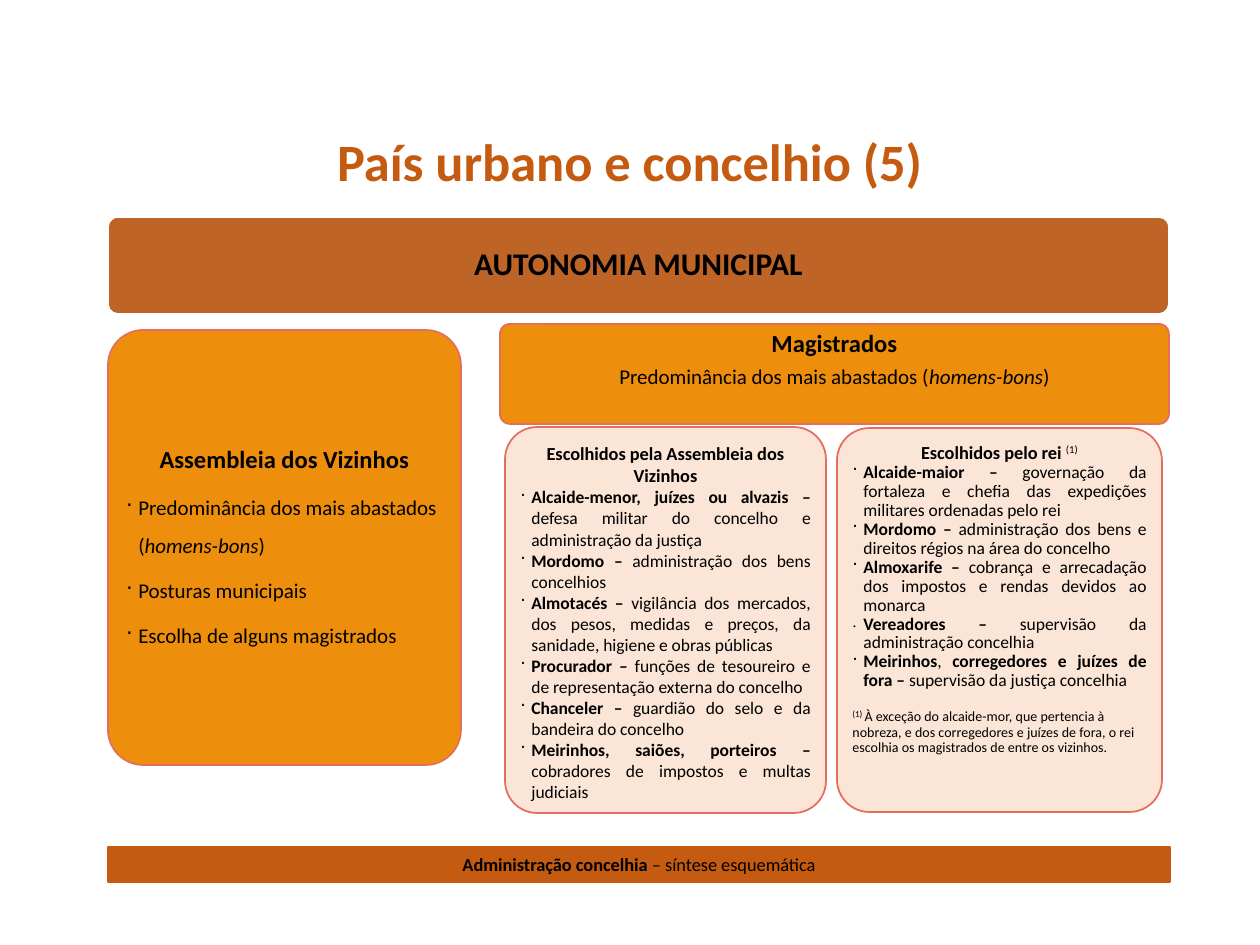
from lxml import etree
from pptx import Presentation
from pptx.dml.color import RGBColor
from pptx.enum.shapes import MSO_SHAPE
from pptx.enum.text import MSO_ANCHOR, MSO_AUTO_SIZE, PP_ALIGN
from pptx.oxml.ns import qn
from pptx.util import Emu, Pt

ROUNDED, RECTANGLE = MSO_SHAPE.ROUNDED_RECTANGLE, MSO_SHAPE.RECTANGLE
TOP, MIDDLE = MSO_ANCHOR.TOP, MSO_ANCHOR.MIDDLE
LEFT, CENTER, JUSTIFY = PP_ALIGN.LEFT, PP_ALIGN.CENTER, PP_ALIGN.JUSTIFY

PX_PER_INCH = 126
FONT = "Calibri"
BLACK, WHITE = "000000", "FFFFFF"
RUST, BROWN, ORANGE = "C55A11", "BE6427", "ED8E0C"
PEACH, CORAL = "FBE5D6", "E46E5E"

COUNCIL_DUTIES = [
    ("Alcaide-menor, juízes ou alvazis –",
     "defesa militar do concelho e administração da justiça"),
    ("Mordomo –", "administração dos bens concelhios"),
    ("Almotacés –", "vigilância dos mercados, dos pesos, medidas e preços, "
                    "da sanidade, higiene e obras públicas"),
    ("Procurador –",
     "funções de tesoureiro e de representação externa do concelho"),
    ("Chanceler –", "guardião do selo e da bandeira do concelho"),
    ("Meirinhos, saiões, porteiros –",
     "cobradores de impostos e multas judiciais"),
]
ROYAL_DUTIES = [
    ("Alcaide-maior –", "governação da fortaleza e chefia das expedições "
                        "militares ordenadas pelo rei"),
    ("Mordomo –",
     "administração dos bens e direitos régios na área do concelho"),
    ("Almoxarife –", "cobrança e arrecadação dos impostos e rendas "
                     "devidos ao monarca"),
    ("Vereadores –", "supervisão da administração concelhia"),
]


def px(length):
    return Emu(round(length * 914400 / PX_PER_INCH))


def rgb(value):
    return RGBColor.from_string(value)


def set_attributes(target, values):
    for name, value in values.items():
        setattr(target, name, value)


def add_panel(slide, box, fill, line, geometry=ROUNDED, line_width=1):
    panel = slide.shapes.add_shape(geometry, *map(px, box))
    if geometry == ROUNDED:
        panel.adjustments[0] = 0.1
    panel.shadow.inherit = False
    panel.fill.solid()
    panel.fill.fore_color.rgb = rgb(fill)
    panel.line.color.rgb = rgb(line)
    panel.line.width = Pt(line_width)
    return panel


def format_frame(frame, inset, anchor=MIDDLE, **overrides):
    sides = ("margin_left", "margin_top", "margin_right", "margin_bottom")
    set_attributes(frame, {
        "word_wrap": True, "auto_size": MSO_AUTO_SIZE.NONE,
        "vertical_anchor": anchor, **dict.fromkeys(sides, px(inset)),
        **overrides})


def add_bullet(paragraph, character, indent):
    """Hang the paragraph from a bullet, with the indent in px."""
    properties = paragraph._p.get_or_add_pPr()
    properties.set("marL", str(px(indent)))
    properties.set("indent", str(-px(indent)))
    etree.SubElement(properties, qn("a:buChar"), char=character)


def write(frame, runs, size, color=BLACK, bullet=None, indent=11, **formats):
    """Add a paragraph; runs are (text, marks[, size]), marks among b, i, ^."""
    first = frame.paragraphs[0]
    paragraph = frame.add_paragraph() if first.runs else first
    if bullet:
        add_bullet(paragraph, bullet, indent)
    set_attributes(paragraph, {
        "alignment": LEFT, "line_spacing": 1.0,
        "space_before": Pt(0), "space_after": Pt(0), **formats})
    for text, marks, *own_size in runs:
        run = paragraph.add_run()
        run.text = text
        set_attributes(run.font, {
            "name": FONT, "size": Pt(own_size[0] if own_size else size),
            "bold": "b" in marks, "italic": "i" in marks})
        run.font.color.rgb = rgb(color)
        if "^" in marks:
            run._r.get_or_add_rPr().set("baseline", "30000")


def write_duties(frame, duties, line_spacing, bullets):
    for (office, duty), bullet in zip(duties, bullets):
        write(frame, [(office + " ", "b"), (duty, "")], 10, bullet=bullet,
              alignment=JUSTIFY, line_spacing=line_spacing)


def add_title(slide):
    title = slide.shapes.title
    set_attributes(title, dict(left=px(0), top=px(122),
                               width=px(1260), height=px(77)))
    format_frame(title.text_frame, 6)
    write(title.text_frame, [("País urbano e concelhio (5)", "b")], 30,
          RUST, alignment=CENTER)


def add_autonomy(slide):
    frame = add_panel(slide, (108, 217, 1061, 97), BROWN, WHITE).text_frame
    format_frame(frame, 9)
    write(frame, [("AUTONOMIA MUNICIPAL", "b")], 18, alignment=CENTER,
          line_spacing=0.9)


def add_assembly(slide, wealthy):
    frame = add_panel(slide, (108, 330, 353, 435), ORANGE, CORAL).text_frame
    format_frame(frame, 8)
    write(frame, [("Assembleia dos Vizinhos", "b")], 14, alignment=CENTER,
          line_spacing=0.9, space_after=Pt(4.9))
    for runs in (wealthy, [("Posturas municipais", "")],
                 [("Escolha de alguns magistrados", "")]):
        write(frame, runs, 12, bullet="·", indent=12, line_spacing=1.5,
              space_after=Pt(4.2))


def add_magistrates(slide, wealthy):
    frame = add_panel(slide, (500, 324, 669, 100), ORANGE, CORAL).text_frame
    format_frame(frame, 8, TOP, margin_top=px(4))
    write(frame, [("Magistrados", "b")], 14, alignment=CENTER,
          line_spacing=0.9, space_after=Pt(4.9))
    write(frame, wealthy, 12, alignment=CENTER, line_spacing=0.9)


def add_council_officers(slide):
    frame = add_panel(slide, (505, 427, 321, 386), PEACH, CORAL).text_frame
    format_frame(frame, 6, TOP)
    write(frame, [("Escolhidos pela Assembleia dos Vizinhos", "b")], 10.5,
          alignment=CENTER)
    write_duties(frame, COUNCIL_DUTIES, 1.0, "·" * len(COUNCIL_DUTIES))


def add_royal_officers(slide):
    frame = add_panel(slide, (837, 428, 325, 384), PEACH, CORAL).text_frame
    format_frame(frame, 6, TOP)
    write(frame, [("Escolhidos pelo rei ", "b"), ("(1)", "^")], 10.5,
          alignment=CENTER, line_spacing=0.9)
    write_duties(frame, ROYAL_DUTIES, 0.9, "···.")
    write(frame, [("Meirinhos", "b"), (", ", ""),
                  ("corregedores e juízes de fora – ", "b"),
                  ("supervisão da justiça concelhia", "")], 10, bullet="·",
          alignment=JUSTIFY, line_spacing=0.9)
    write(frame, [("(1) ", "^", 9),
                  ("À exceção do alcaide-mor, que pertencia à nobreza, e dos "
                   "corregedores e juízes de fora, o rei escolhia os "
                   "magistrados de entre os vizinhos.", "")], 8,
          line_spacing=0.9, space_before=Pt(10))


def add_caption(slide):
    frame = add_panel(slide, (108, 847, 1062, 35), RUST, RUST, RECTANGLE,
                      0.75).text_frame
    format_frame(frame, 6)
    write(frame, [("Administração concelhia ", "b"),
                  ("– síntese esquemática", "")], 10.5, alignment=CENTER)


def main():
    deck = Presentation()
    deck.slide_width, deck.slide_height = px(1260), px(945)
    slide = deck.slides.add_slide(deck.slide_layouts[5])
    wealthy = [("Predominância dos mais abastados (", ""),
               ("homens-bons", "i"), (")", "")]
    add_title(slide)
    add_autonomy(slide)
    add_assembly(slide, wealthy)
    add_magistrates(slide, wealthy)
    add_council_officers(slide)
    add_royal_officers(slide)
    add_caption(slide)
    deck.save("out.pptx")


if __name__ == "__main__":
    main()
